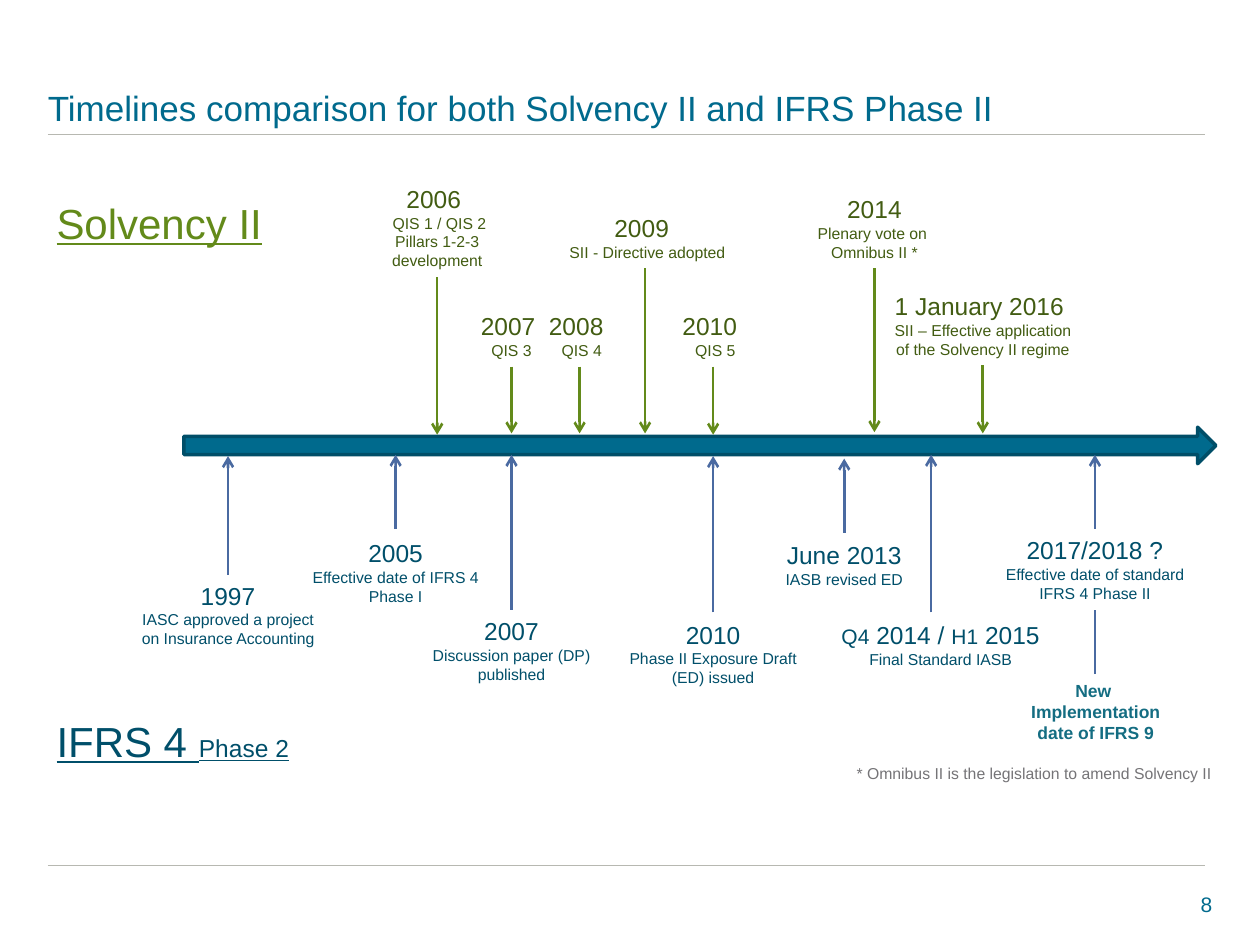
from lxml import etree
from pptx import Presentation
from pptx.dml.color import RGBColor
from pptx.enum.shapes import MSO_CONNECTOR, MSO_SHAPE
from pptx.enum.text import MSO_ANCHOR, PP_ALIGN
from pptx.oxml.ns import qn
from pptx.util import Inches, Pt

LEFT, MID, RIGHT = PP_ALIGN.LEFT, PP_ALIGN.CENTER, PP_ALIGN.RIGHT
BOTTOM = MSO_ANCHOR.BOTTOM
STRAIGHT = MSO_CONNECTOR.STRAIGHT
ARROW = MSO_SHAPE.RIGHT_ARROW

WHITE = RGBColor(0xFF, 0xFF, 0xFF)
RULE = RGBColor(0xB7, 0xB8, 0xB1)
TEAL = RGBColor(0x00, 0x6A, 0x8D)
EDGE = RGBColor(0x00, 0x4E, 0x68)
NAVY = RGBColor(0x00, 0x4F, 0x6A)
BLUE = RGBColor(0x4A, 0x6A, 0xA1)
GREEN = RGBColor(0x63, 0x8A, 0x1A)
OLIVE = RGBColor(0x42, 0x5C, 0x12)
CYAN = RGBColor(0x14, 0x6D, 0x82)
GREY = RGBColor(0x75, 0x74, 0x77)

# centre, top, height, tip, filled, heading, details
SOLVENCY = [
    (7.8, 2.26, 0.64, 3.44, True, "1 January 2016 ",
     ["SII – Effective application of the Solvency II regime"]),
    (4.06, 2.42, 0.49, 3.44, True, "2007 ", ["QIS 3"]),
    (4.6, 2.42, 0.49, 3.44, False, "2008 ", [" QIS 4"]),
    (5.66, 2.42, 0.49, 3.45, False, "2010 ", [" QIS 5"]),
    (5.12, 1.64, 0.49, 3.44, False, "2009 ", [" SII - Directive adopted"]),
    (3.47, 1.41, 0.79, 3.45, False, "2006 ",
     [" QIS 1 / QIS 2", "Pillars 1-2-3", "development"]),
    (6.94, 1.49, 0.64, 3.43, True, "2014",
     ["Plenary vote on ", "Omnibus II *"]),
]

# centre, top, width, height, arrow start, tip, filled, heading, detail
IFRS = [
    (1.81, 4.56, 1.7, 0.64, 4.56, 3.62, False, "1997",
     "IASC approved a project on Insurance Accounting"),
    (3.14, 4.22, 1.7, 0.64, 4.2, 3.61, False, "2005",
     "Effective date of IFRS 4 Phase I"),
    (4.06, 4.84, 1.7, 0.64, 4.84, 3.61, False, "2007",
     "Discussion paper (DP) published"),
    (5.66, 4.87, 1.7, 0.64, 4.86, 3.62, False, "2010",
     "Phase II Exposure Draft (ED) issued"),
    (6.7, 4.24, 1.7, 0.49, 4.23, 3.64, False, "June 2013",
     "IASB revised ED"),
    (7.39, 4.87, 1.85, 0.49, 4.86, 3.61, False,
     [("Q4", 12), (" 2014 / ", 14), ("H1", 12), (" 2015", 14)],
     "Final Standard IASB"),
    (8.69, 4.2, 1.7, 0.64, 5.35, 3.61, True, "2017/2018 ?",
     "Effective date of standard IFRS 4 Phase II"),
]


def add_text(slide, place, paras, color, align=LEFT, bold=False, under=False):
    """Add a text box whose paragraphs are lists of (text, size) runs."""
    box = slide.shapes.add_textbox(*map(Inches, place))
    frame = box.text_frame
    frame.word_wrap = True
    for i, runs in enumerate(paras):
        para = frame.paragraphs[0] if i == 0 else frame.add_paragraph()
        para.alignment = align
        for text, size in runs:
            run = para.add_run()
            run.text = text
            font = run.font
            font.name, font.size = "Arial", Pt(size)
            font.bold, font.underline = bold, under
            font.color.rgb = color
    return box


def add_event(slide, place, head, notes, color, filled):
    """Add a centred date with its small details below."""
    runs = [(head, 14)] if isinstance(head, str) else head
    paras = [runs] + [[(note, 9)] for note in notes]
    box = add_text(slide, place, paras, color, MID)
    if filled:
        box.fill.solid()
        box.fill.fore_color.rgb = WHITE


def add_line(slide, start, end, color, width, head=False):
    """Add a straight line, with an open arrowhead if asked."""
    line = slide.shapes.add_connector(STRAIGHT, *map(Inches, start + end))
    line.line.color.rgb = color
    line.line.width = Pt(width)
    if head:
        tail = etree.SubElement(line.line._get_or_add_ln(), qn("a:tailEnd"))
        tail.set("type", "arrow")
    etree.SubElement(line._element.spPr, qn("a:effectLst"))


def add_frame(slide):
    """Add the title, the two rules and the page number."""
    for y in (1.07, 6.87):
        add_line(slide, (0.38, y), (9.56, y), RULE, 0.75)
    page = add_text(slide, (7.44, 7.03, 2.18, 0.3), [[("8", 12)]], TEAL, RIGHT)
    page.text_frame.margin_right = 0
    title = add_text(slide, (0.38, 0.3, 9.23, 0.77), [[(
        "Timelines comparison for both Solvency II and IFRS Phase II", 20)]], TEAL)
    title.text_frame.margin_left = 0
    title.text_frame.vertical_anchor = BOTTOM


def add_axis(slide):
    """Add the wide time arrow."""
    axis = slide.shapes.add_shape(ARROW, *map(Inches, (1.46, 3.39, 8.19, 0.29)))
    axis.shadow.inherit = False
    axis.fill.solid()
    axis.fill.fore_color.rgb = TEAL
    axis.line.color.rgb = EDGE
    axis.line.width = Pt(2)


def main():
    """Build the slide and save it."""
    deck = Presentation()
    deck.slide_width, deck.slide_height = Inches(10), Inches(7.5)
    slide = deck.slides.add_slide(deck.slide_layouts[6])
    add_frame(slide)
    add_axis(slide)
    for x, top, wide, high, start, tip, filled, head, note in IFRS:
        add_line(slide, (x, start), (x, tip), BLUE, 1.5, True)
        add_event(slide, (x - 0.85, top, wide, high), head, [note], NAVY, filled)
    for x, top, high, tip, filled, head, notes in SOLVENCY:
        add_event(slide, (x - 0.8, top, 1.6, high), head, notes, OLIVE, filled)
        add_line(slide, (x, top + high), (x, tip), GREEN, 1.5, True)
    add_text(slide, (7.94, 5.35, 1.51, 0.61),
             [[("New ", 10)], [("Implementation date of IFRS 9", 10)]],
             CYAN, MID, bold=True)
    add_text(slide, (0.35, 1.52, 2.01, 0.5), [[("Solvency II", 24)]],
             GREEN, under=True)
    add_text(slide, (0.35, 5.63, 2.25, 0.5), [[("IFRS 4 ", 24), ("Phase 2", 14)]],
             NAVY, under=True)
    add_text(slide, (6.7, 6.01, 3.15, 0.25),
             [[("* Omnibus II is the legislation to amend Solvency II", 9)]], GREY)
    deck.save("out.pptx")


if __name__ == "__main__":
    main()
